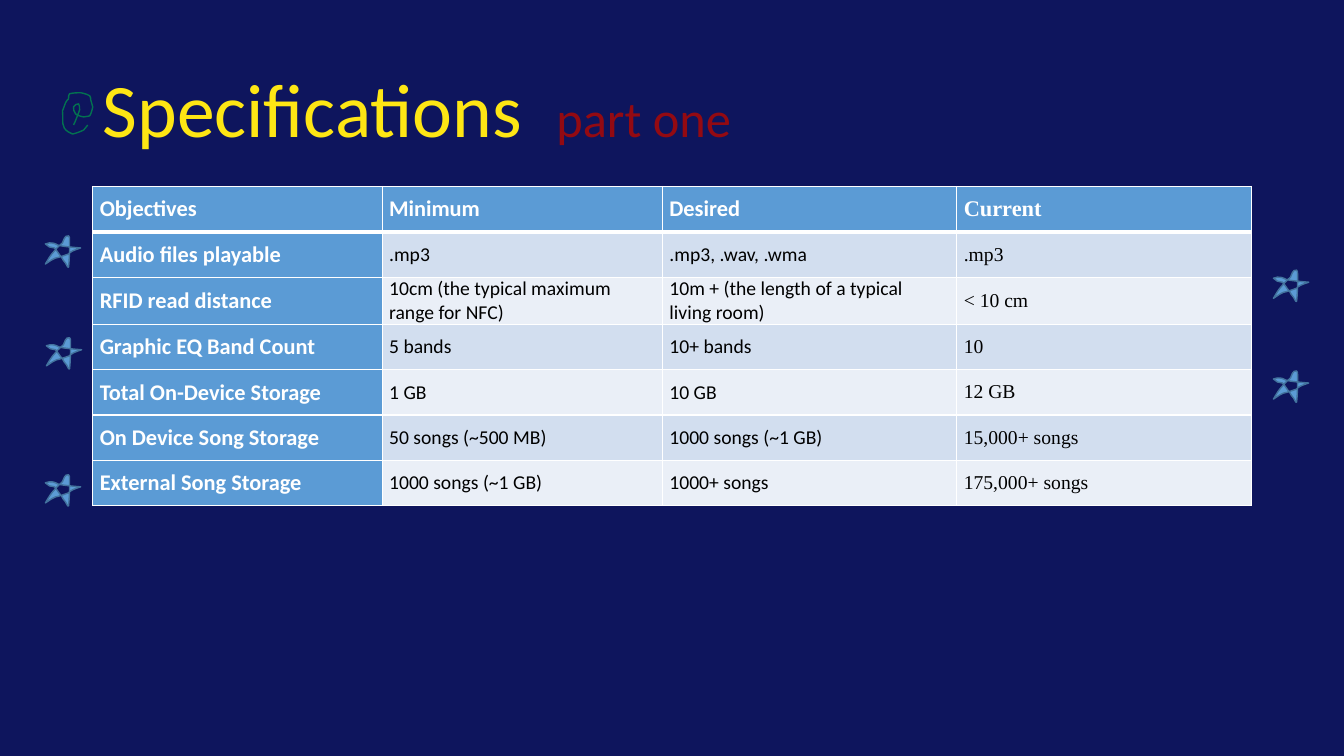
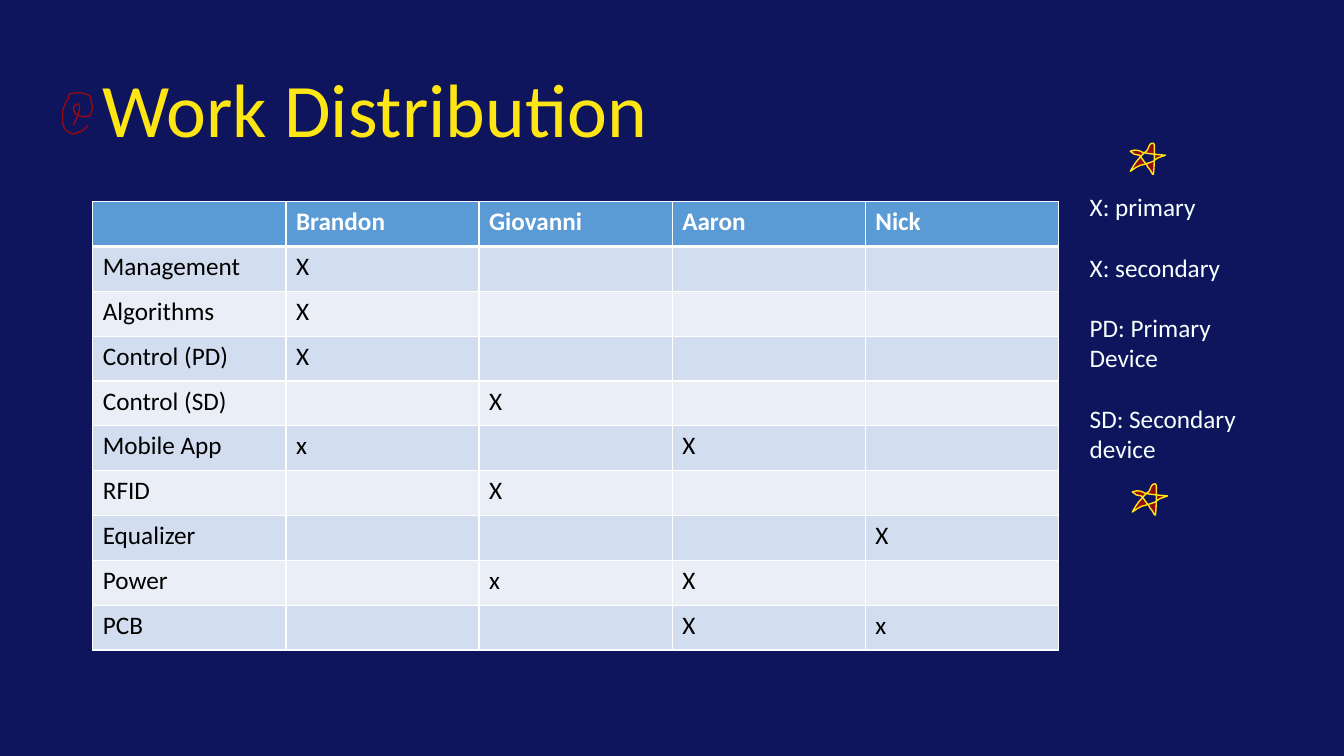
from lxml import etree
from pptx import Presentation
from pptx.dml.color import RGBColor
from pptx.enum.text import MSO_ANCHOR
from pptx.oxml.ns import qn
from pptx.util import Inches, Pt

MIDDLE = MSO_ANCHOR.MIDDLE
TOP = MSO_ANCHOR.TOP

NAVY = "0E155D"
YELLOW = "FEE614"
RED = "930A12"
GREEN = "037150"
BLUE = "5B9BD5"
DARK_BLUE = "43739E"
BANDS = ["EAEFF7", "D2DEEF"]
WHITE = "FFFFFF"
BLACK = "000000"
LEGEND_WHITE = "F7FFFF"
SANS = "Calibri"
SERIF = "Times New Roman"

STAR_START = (0, 28)
STAR_CURVES = [
    (3, 23, 5, 19, 9, 15), (11, 12, 17, 7, 17, 7), (18, 5, 19, -1, 23, 0),
    (24, 0, 24, 3, 24, 4), (24, 13, 24, 22, 23, 31), (22, 32, 21, 28, 20, 27),
    (18, 25, 17, 23, 16, 21), (13, 18, 12, 15, 9, 12), (7, 12, 6, 12, 4, 11),
    (3, 10, 1, 9, 0, 8), (1, 8, 3, 7, 4, 7), (12, 7, 9, 9, 16, 10),
    (22, 11, 35, 12, 35, 12), (32, 13, 29, 14, 27, 15), (25, 16, 24, 17, 23, 18),
    (23, 18, 12, 22, 10, 22), (9, 23, 7, 23, 6, 24),
]
SWIRL_START = (11, 32)
SWIRL_CURVES = [
    (12, 30, 13, 28, 14, 25), (15, 23, 17, 17, 17, 17), (17, 15, 17, 12, 16, 11),
    (14, 11, 12, 12, 11, 14), (11, 16, 11, 19, 13, 21), (15, 23, 21, 24, 21, 24),
    (23, 23, 26, 24, 27, 23), (29, 20, 30, 14, 30, 14), (29, 12, 29, 9, 28, 7),
    (28, 6, 28, 4, 27, 3), (24, 1, 18, 0, 18, 0), (15, 0, 11, 0, 7, 1),
    (6, 2, 6, 4, 6, 6), (5, 7, 4, 8, 3, 10), (2, 13, 0, 18, 0, 18),
    (1, 29, -2, 34, 6, 39), (7, 40, 9, 40, 10, 41), (14, 40, 17, 39, 21, 37),
    (23, 35, 25, 32, 25, 32),
]


def rgb(hex_color):
    return RGBColor.from_string(hex_color)


def write(paragraph, text, size=18, color=BLACK, bold=False, font=SANS):
    run = paragraph.add_run()
    run.text = text
    run.font.size = Pt(size)
    run.font.color.rgb = rgb(color)
    run.font.bold = bold
    run.font.name = font


prs = Presentation()
prs.slide_width = Inches(13.33)
prs.slide_height = Inches(7.5)
background = prs.slide_master.background.fill
background.solid()
background.fore_color.rgb = rgb(NAVY)

pages = [
    {
        "title": "Specifications",
        "subtitle": "part one",
        "top": 1.85,
        "height": 3.15,
        "columns": [2.87, 2.78, 2.92, 2.92],
        "header_column": True,
        "head_size": 16,
        "body_size": 14,
        "last_font": SERIF,
        "anchor": MIDDLE,
        "margins": (0.07, 0.08, 0),
        "rows": [
            ["Objectives", "Minimum", "Desired", "Current"],
            ["Audio files playable", ".mp3", ".mp3, .wav, .wma", ".mp3"],
            ["RFID read distance", "10cm (the typical maximum range for NFC)",
             "10m + (the length of a typical living room)", "< 10 cm"],
            ["Graphic EQ Band Count", "5 bands", "10+ bands", "10"],
            ["Total On-Device Storage", "1 GB", "10 GB", "12 GB"],
            ["On Device Song Storage", "50 songs (~500 MB)", "1000 songs (~1 GB)", "15,000+ songs"],
            ["External Song Storage", "1000 songs (~1 GB)", "1000+ songs", "175,000+ songs"],
        ],
        "legend": [],
        "swirl": GREEN,
        "star_colors": (BLUE, DARK_BLUE),
        "stars": [(0.45, 2.34), (0.46, 3.35), (0.45, 4.71), (12.63, 2.68), (12.63, 3.68)],
    },
    {
        "title": "Work Distribution",
        "subtitle": "",
        "top": 2,
        "height": 4.45,
        "columns": [9.58 / 5] * 5,
        "header_column": False,
        "head_size": 18,
        "body_size": 18,
        "last_font": SANS,
        "anchor": TOP,
        "margins": (0.1, 0.1, 0.05),
        "rows": [
            ["", "Brandon", "Giovanni", "Aaron", "Nick"],
            ["Management", "X", "", "", ""],
            ["Algorithms", "X", "", "", ""],
            ["Control (PD)", "X", "", "", ""],
            ["Control (SD)", "", "X", "", ""],
            ["Mobile App", "x", "", "X", ""],
            ["RFID", "", "X", "", ""],
            ["Equalizer", "", "", "", "X"],
            ["Power", "", "x", "X", ""],
            ["PCB", "", "", "X", "x"],
        ],
        "legend": ["X: primary", "X: secondary", "PD: Primary Device", "SD: Secondary device"],
        "swirl": RED,
        "star_colors": (RED, YELLOW),
        "stars": [(11.21, 1.42), (11.23, 4.8)],
    },
]

for page in pages:
    slide = prs.slides.add_slide(prs.slide_layouts[6])

    title = slide.shapes.add_textbox(Inches(0.92), Inches(0.4), Inches(11.5), Inches(1.45)).text_frame
    title.word_wrap = True
    title.vertical_anchor = MIDDLE
    heading = title.paragraphs[0]
    heading.line_spacing = 0.9
    if page["subtitle"]:
        tabs = etree.SubElement(heading._p.get_or_add_pPr(), qn("a:tabLst"))
        etree.SubElement(tabs, qn("a:tab"), pos=str(Inches(4.5)), algn="l")
        write(heading, page["title"] + "\t", size=54, color=YELLOW)
        write(heading, page["subtitle"], size=36, color=RED)
    else:
        write(heading, page["title"], size=54, color=YELLOW)

    rows, columns = page["rows"], page["columns"]
    grid = slide.shapes.add_table(
        len(rows), len(columns), Inches(0.92), Inches(page["top"]),
        Inches(sum(columns)), Inches(page["height"])).table
    for column, width in zip(grid.columns, columns):
        column.width = Inches(width)
    left_margin, right_margin, edge_margin = page["margins"]
    for r, row in enumerate(rows):
        grid.rows[r].height = Inches(page["height"] / len(rows))
        for c, text in enumerate(row):
            cell = grid.cell(r, c)
            cell.vertical_anchor = page["anchor"]
            cell.margin_left = Inches(left_margin)
            cell.margin_right = Inches(right_margin)
            cell.margin_top = cell.margin_bottom = Inches(edge_margin)
            for side in "LRTB":
                thick = (r, side) in [(0, "B"), (1, "T")]
                border = etree.SubElement(cell._tc.get_or_add_tcPr(), qn("a:ln" + side),
                                          w=str(Pt(3 if thick else 1)))
                border_fill = etree.SubElement(border, qn("a:solidFill"))
                etree.SubElement(border_fill, qn("a:srgbClr"), val=WHITE)
            is_head = r == 0 or (c == 0 and page["header_column"])
            cell.fill.solid()
            cell.fill.fore_color.rgb = rgb(BLUE if is_head else BANDS[r % 2])
            if text:
                write(cell.text_frame.paragraphs[0], text,
                      size=page["head_size"] if is_head else page["body_size"],
                      color=WHITE if is_head else BLACK, bold=is_head,
                      font=page["last_font"] if c == len(row) - 1 else SANS)

    if page["legend"]:
        legend = slide.shapes.add_textbox(Inches(10.71), Inches(1.85), Inches(1.7), Inches(2.83)).text_frame
        legend.word_wrap = True
        for i, entry in enumerate(page["legend"]):
            line = legend.paragraphs[0] if i == 0 else legend.add_paragraph()
            line.space_before = Pt(21.6 if i else 0)
            write(line, entry, color=LEGEND_WHITE)

    star_fill, star_line = page["star_colors"]
    doodles = [(STAR_START, STAR_CURVES, spot, star_fill, star_line) for spot in page["stars"]]
    doodles.append((SWIRL_START, SWIRL_CURVES, (0.62, 0.92), None, page["swirl"]))
    for start, curves, (left, top), fill, outline in doodles:
        builder = slide.shapes.build_freeform(*start, scale=Inches(0.01))
        builder.add_line_segments([curve[4:] for curve in curves], close=fill is not None)
        doodle = builder.convert_to_shape(Inches(left), Inches(top))
        segments = list(doodle._element.iter(qn("a:lnTo")))
        for segment, curve in zip(segments, curves):
            bezier = etree.Element(qn("a:cubicBezTo"))
            for x, y in zip(curve[::2], curve[1::2]):
                etree.SubElement(bezier, qn("a:pt"), x=str(x), y=str(y))
            segment.getparent().replace(segment, bezier)
        doodle.shadow.inherit = False
        doodle.line.color.rgb = rgb(outline)
        doodle.line.width = Pt(1)
        if fill:
            doodle.fill.solid()
            doodle.fill.fore_color.rgb = rgb(fill)
        else:
            doodle.fill.background()

prs.save("out.pptx")
